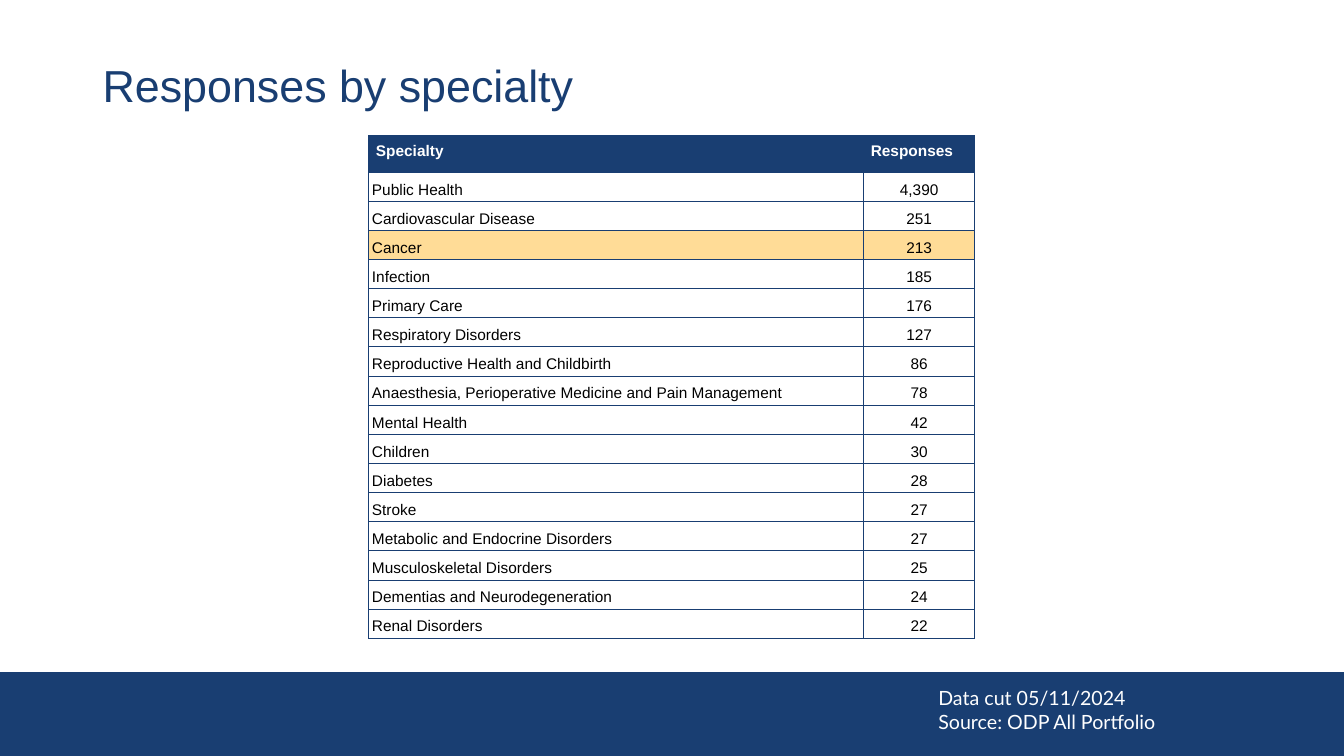
from dataclasses import dataclass

from lxml.etree import SubElement
from pptx import Presentation
from pptx.dml.color import RGBColor
from pptx.enum.shapes import MSO_SHAPE
from pptx.enum.text import MSO_ANCHOR, PP_ALIGN
from pptx.oxml.ns import qn
from pptx.slide import Slide
from pptx.table import _Cell as Cell
from pptx.text.text import _Paragraph as Paragraph
from pptx.util import Pt

NAVY = "193E72"
WHITE = "FFFFFF"
BLACK = "000000"
HIGHLIGHT = "FFDC97"

COLUMN_WIDTHS = (353.5, 79.2)
HEADER_HEIGHT = 26
ROW_HEIGHT = 20.82
THIN, MEDIUM, THICK = 0.83, 1, 1.67


@dataclass(frozen=True)
class Specialty:
    name: str
    responses: int
    highlighted: bool = False


@dataclass(frozen=True)
class TextBox:
    left: float
    top: float
    width: float
    height: float
    lines: tuple[str, ...]
    size: float
    font: str
    color: str
    vertical_margin: float
    anchor: MSO_ANCHOR = MSO_ANCHOR.TOP
    line_spacing: float = 1.0


@dataclass(frozen=True)
class CellStyle:
    margin: float
    anchor: MSO_ANCHOR
    color: str
    bold: bool = False
    line_spacing: float = 1.0


HEADER_STYLE = CellStyle(5, MSO_ANCHOR.TOP, WHITE, bold=True)
BODY_STYLE = CellStyle(2.2, MSO_ANCHOR.BOTTOM, BLACK, line_spacing=1.15)

SPECIALTIES = (
    Specialty("Public Health", 4390),
    Specialty("Cardiovascular Disease", 251),
    Specialty("Cancer", 213, highlighted=True),
    Specialty("Infection", 185),
    Specialty("Primary Care", 176),
    Specialty("Respiratory Disorders", 127),
    Specialty("Reproductive Health and Childbirth", 86),
    Specialty("Anaesthesia, Perioperative Medicine and Pain Management", 78),
    Specialty("Mental Health", 42),
    Specialty("Children", 30),
    Specialty("Diabetes", 28),
    Specialty("Stroke", 27),
    Specialty("Metabolic and Endocrine Disorders", 27),
    Specialty("Musculoskeletal Disorders", 25),
    Specialty("Dementias and Neurodegeneration", 24),
    Specialty("Renal Disorders", 22),
)

TEXT_BOXES = (
    TextBox(663.1, 483.1, 223.9, 48.2,
            ("Data cut 05/11/2024", "Source: ODP All Portfolio"),
            14, "Lato", WHITE, vertical_margin=7.2),
    TextBox(66.2, 28.8, 828, 68.4, ("Responses by specialty",),
            32, "Arial", NAVY, vertical_margin=3.6,
            anchor=MSO_ANCHOR.MIDDLE, line_spacing=0.9),
)


def rgb(color: str) -> RGBColor:
    return RGBColor.from_string(color)


def add_run(paragraph: Paragraph, text: str, size: float, font: str,
            color: str, bold: bool = False) -> None:
    run = paragraph.add_run()
    run.text = text
    run.font.size = Pt(size)
    run.font.name = font
    run.font.bold = bold
    run.font.color.rgb = rgb(color)


def add_footer_band(slide: Slide) -> None:
    band = slide.shapes.add_shape(
        MSO_SHAPE.RECTANGLE, Pt(-0.5), Pt(480.2), Pt(960.5), Pt(59.8))
    band.shadow.inherit = False
    band.fill.solid()
    band.fill.fore_color.rgb = rgb(NAVY)
    band.line.fill.background()


def add_text_box(slide: Slide, box: TextBox) -> None:
    shape = slide.shapes.add_textbox(
        Pt(box.left), Pt(box.top), Pt(box.width), Pt(box.height))
    frame = shape.text_frame
    frame.word_wrap = True
    frame.vertical_anchor = box.anchor
    frame.margin_left = frame.margin_right = Pt(7.2)
    frame.margin_top = frame.margin_bottom = Pt(box.vertical_margin)
    for index, line in enumerate(box.lines):
        paragraph = frame.add_paragraph() if index else frame.paragraphs[0]
        paragraph.line_spacing = box.line_spacing
        add_run(paragraph, line, box.size, box.font, box.color)


def set_borders(cell: Cell, side: float, top: float, bottom: float) -> None:
    """Draw the four cell borders; call before setting the cell's fill."""
    properties = cell._tc.get_or_add_tcPr()
    for tag, width in (("lnL", side), ("lnR", side), ("lnT", top), ("lnB", bottom)):
        line = SubElement(properties, qn(f"a:{tag}"), w=str(int(Pt(width))))
        fill = SubElement(line, qn("a:solidFill"))
        SubElement(fill, qn("a:srgbClr"), val=NAVY)


def fill_cell(cell: Cell, text: str, style: CellStyle, alignment: PP_ALIGN,
              fill: str | None) -> None:
    cell.margin_left = cell.margin_right = Pt(style.margin)
    cell.margin_top = cell.margin_bottom = Pt(style.margin)
    cell.vertical_anchor = style.anchor
    if fill:
        cell.fill.solid()
        cell.fill.fore_color.rgb = rgb(fill)
    else:
        cell.fill.background()
    paragraph = cell.text_frame.paragraphs[0]
    paragraph.alignment = alignment
    paragraph.line_spacing = style.line_spacing
    add_run(paragraph, text, 11, "Arial", style.color, style.bold)


def add_response_table(slide: Slide) -> None:
    last_row = len(SPECIALTIES)
    table = slide.shapes.add_table(
        last_row + 1, len(COLUMN_WIDTHS), Pt(263.5), Pt(97),
        Pt(sum(COLUMN_WIDTHS)), Pt(HEADER_HEIGHT + last_row * ROW_HEIGHT)).table
    table.first_row = False
    table.horz_banding = False
    for column, width in zip(table.columns, COLUMN_WIDTHS):
        column.width = Pt(width)
    for index, row in enumerate(table.rows):
        row.height = Pt(ROW_HEIGHT if index else HEADER_HEIGHT)

    for column, heading in enumerate(("Specialty", "Responses")):
        cell = table.cell(0, column)
        set_borders(cell, MEDIUM, MEDIUM, THICK)
        fill_cell(cell, heading, HEADER_STYLE, PP_ALIGN.LEFT, NAVY)

    for row, specialty in enumerate(SPECIALTIES, start=1):
        top = THICK if row == 1 else THIN
        bottom = MEDIUM if row == last_row else THIN
        fill = HIGHLIGHT if specialty.highlighted else None
        entries = ((specialty.name, PP_ALIGN.LEFT),
                   (f"{specialty.responses:,}", PP_ALIGN.CENTER))
        for column, (text, alignment) in enumerate(entries):
            cell = table.cell(row, column)
            set_borders(cell, THIN, top, bottom)
            fill_cell(cell, text, BODY_STYLE, alignment, fill)


def main() -> None:
    presentation = Presentation()
    presentation.slide_width = Pt(960)
    presentation.slide_height = Pt(540)
    slide = presentation.slides.add_slide(presentation.slide_layouts[6])
    add_footer_band(slide)
    for box in TEXT_BOXES:
        add_text_box(slide, box)
    add_response_table(slide)
    presentation.save("out.pptx")


if __name__ == "__main__":
    main()
